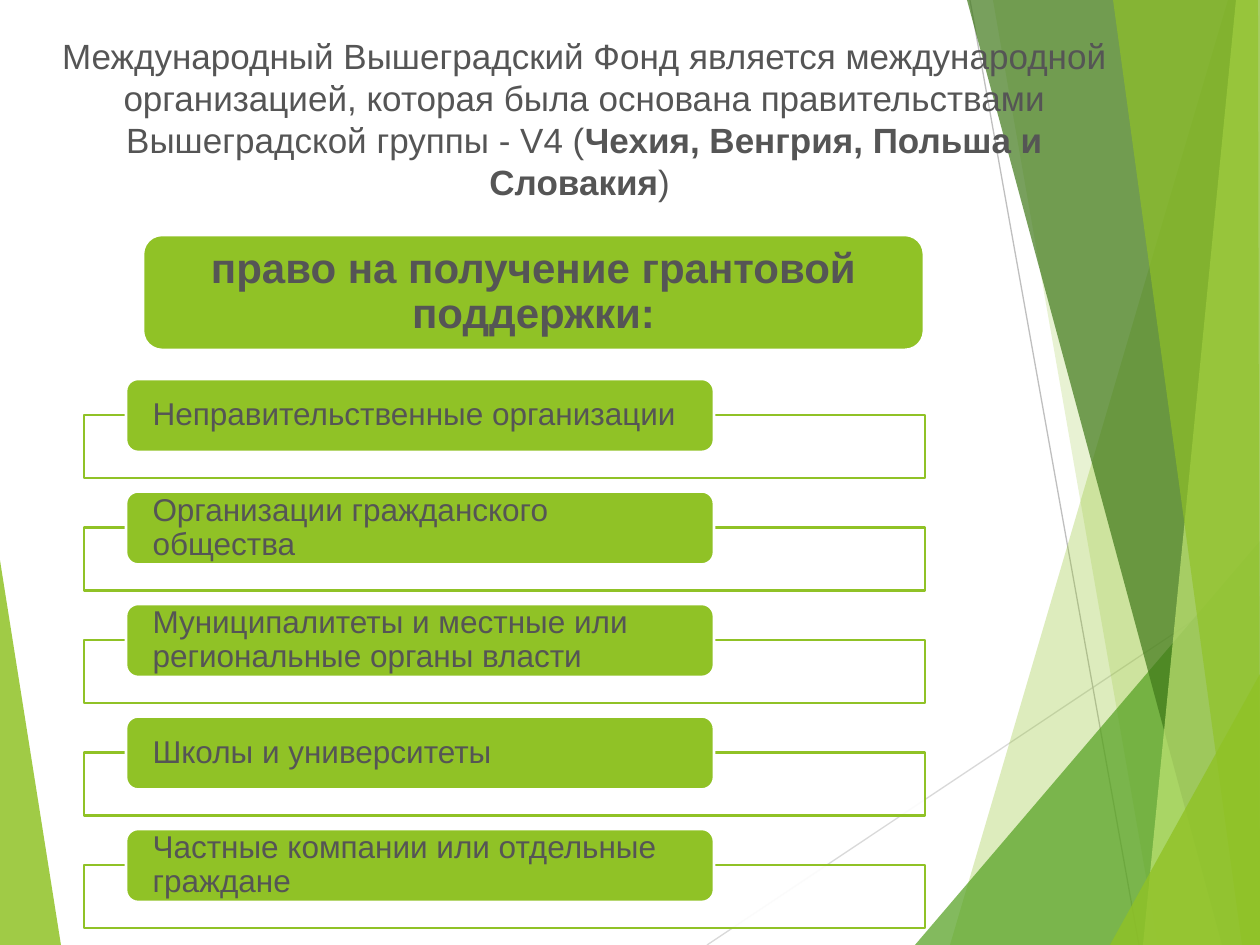
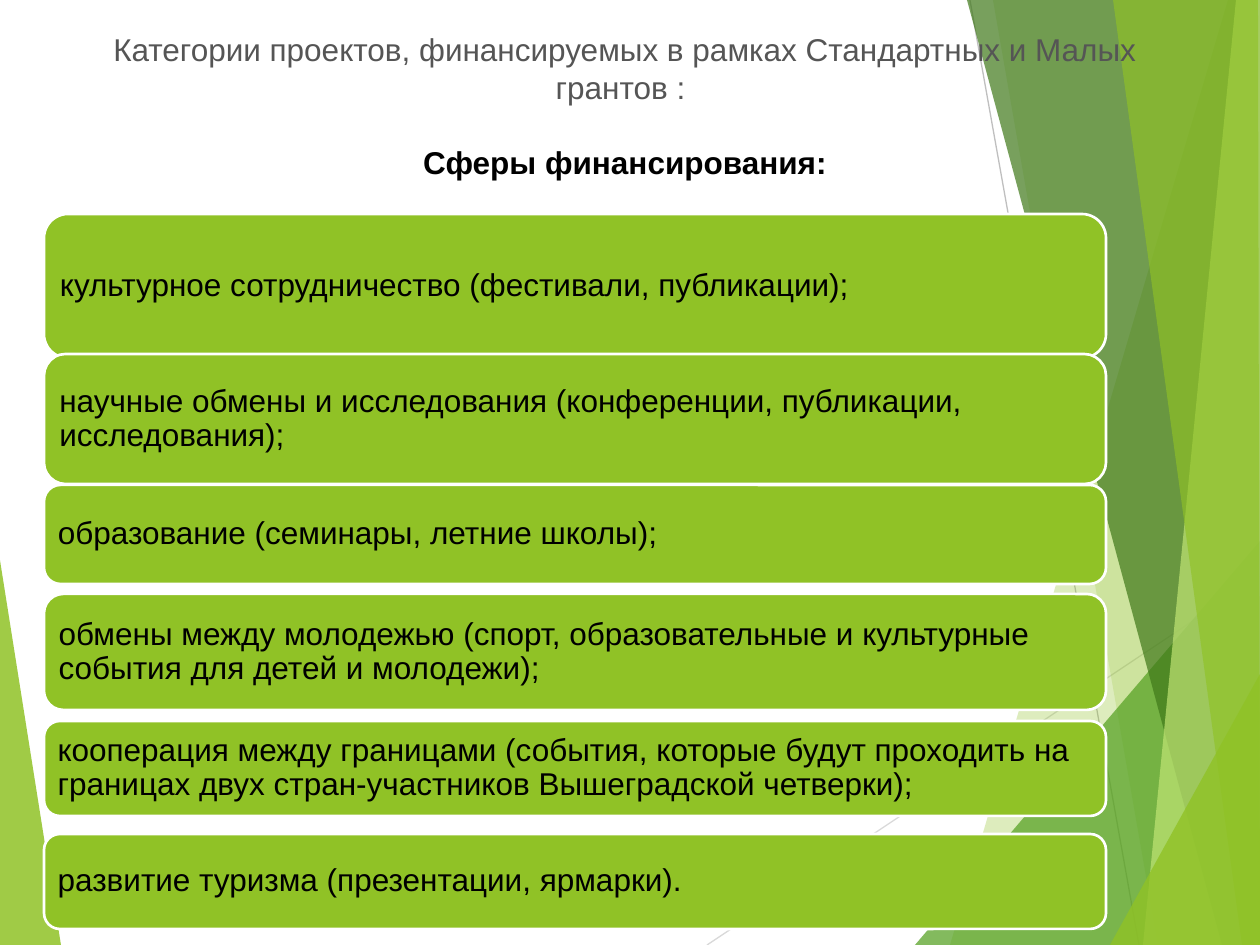
import pptx
import pptx.dml.color
import pptx.enum.shapes
import pptx.enum.text
import pptx.oxml.ns
import pptx.oxml.xmlchemy
import pptx.util
import lxml.etree
from dataclasses import dataclass


@dataclass(frozen=True)
class Theme:
    font: str = "Arial"
    lime: str = "90C226"
    green: str = "54A021"
    forest: str = "3F7819"
    pale: str = "C0E474"
    white: str = "FFFFFF"
    black: str = "000000"
    grey: str = "555555"
    light_line: str = "D9D9D9"
    dark_line: str = "BFBFBF"
    lead_size: int = 20
    body_size: int = 18
    band_size: int = 24
    outline: float = 1.5
    hairline: float = 0.75


THEME = Theme()
SCALE = 914400 / 126
WIDTH, HEIGHT = 1260, 945
ALIGN = pptx.enum.text.PP_ALIGN
ANCHOR = pptx.enum.text.MSO_ANCHOR
PRESET = pptx.enum.shapes.MSO_SHAPE

LEFT_WEDGE = (THEME.lime, 85, [(0, 560), (61, HEIGHT), (0, HEIGHT)])
GUIDE_LINES = [
    (THEME.light_line, (707, HEIGHT), (WIDTH, 576)),
    (THEME.dark_line, (970, 0), (1139, HEIGHT)),
]
RIGHT_FACETS = [
    (THEME.lime, 30, [(1228, 0), (950, HEIGHT), (WIDTH, HEIGHT), (WIDTH, 0)]),
    (THEME.lime, 20, [(993, 0), (1158, HEIGHT), (WIDTH, HEIGHT), (WIDTH, 0)]),
    (THEME.green, 72, [(915, HEIGHT), (WIDTH, 541), (WIDTH, HEIGHT)]),
    (THEME.forest, 70, [(967, 0), (1222, HEIGHT), (WIDTH, HEIGHT), (WIDTH, 0)]),
    (THEME.pale, 70, [(1236, 0), (1143, HEIGHT), (WIDTH, HEIGHT), (WIDTH, 0)]),
    (THEME.lime, 65, [(1113, 0), (1242, HEIGHT), (WIDTH, HEIGHT), (1258, 0)]),
    (THEME.lime, 80, [(1110, HEIGHT), (WIDTH, 674), (WIDTH, HEIGHT)]),
]

FUND_TITLE = [
    [
        ("Международный Вышеградский Фонд является международной организацией, "
         "которая была основана правительствами Вышеградской группы - V4 (",
         False, THEME.grey),
        ("Чехия, Венгрия, Польша и Словакия", True, THEME.grey),
        (") ", False, THEME.grey),
    ],
]
GRANT_BAND = "право на получение грантовой поддержки:"
APPLICANTS = [
    "Неправительственные организации",
    "Организации гражданского общества",
    "Муниципалитеты и местные или региональные органы власти",
    "Школы и университеты",
    "Частные компании или отдельные граждане",
]
FIRST_LABEL_TOP, LAST_LABEL_TOP = 379, 829

CATEGORIES_TITLE = [
    [("Категории проектов, финансируемых в рамках Стандартных и Малых грантов : ",
      False, THEME.grey)],
    [("Сферы финансирования:", True, THEME.black)],
]
FUNDING_AREAS = [
    (214, 144, "культурное сотрудничество (фестивали, публикации);"),
    (354, 130, "научные обмены и исследования (конференции, публикации, исследования);"),
    (485, 99, "образование (семинары, летние школы);"),
    (594, 116, "обмены между молодежью (спорт, образовательные и культурные "
               "события для детей и молодежи);"),
    (721, 95, "кооперация между границами (события, которые будут проходить на "
              "границах двух стран-участников Вышеградской четверки);"),
    (834, 95, "развитие туризма (презентации, ярмарки)."),
]


def px(value):
    return pptx.util.Emu(round(value * SCALE))


def rgb(value):
    return pptx.dml.color.RGBColor.from_string(value)


def apply_format(target, values):
    for name, value in values.items():
        setattr(target, name, value)


def format_font(font, size, color, bold=False):
    apply_format(font, {"name": THEME.font, "size": pptx.util.Pt(size), "bold": bold})
    font.color.rgb = rgb(color)


def paint(shape, color, opacity=100):
    shape.shadow.inherit = False
    shape.fill.solid()
    shape.fill.fore_color.rgb = rgb(color)
    if opacity < 100:
        color_element = shape.element.spPr.find(
            pptx.oxml.ns.qn("a:solidFill") + "/" + pptx.oxml.ns.qn("a:srgbClr"))
        alpha = lxml.etree.SubElement(color_element, pptx.oxml.ns.qn("a:alpha"))
        alpha.set("val", str(opacity * 1000))


def add_facet(slide, color, opacity, points):
    builder = slide.shapes.build_freeform(*points[0], scale=SCALE)
    builder.add_line_segments(points[1:], close=True)
    shape = builder.convert_to_shape()
    paint(shape, color, opacity)
    shape.line.fill.background()
    return shape


def add_guide(slide, color, start, end):
    connector = slide.shapes.add_connector(
        pptx.enum.shapes.MSO_CONNECTOR.STRAIGHT, *map(px, start + end))
    connector.line.color.rgb = rgb(color)
    connector.line.width = pptx.util.Pt(THEME.hairline)
    lxml.etree.SubElement(connector.element.spPr, pptx.oxml.ns.qn("a:effectLst"))
    return connector


def move_backdrop_to_layout(slide, layout):
    for placeholder in list(layout.placeholders):
        if placeholder.placeholder_format.idx != 0:
            layout.shapes.element.remove(placeholder.element)
    backdrop = [add_facet(slide, *LEFT_WEDGE)]
    backdrop += [add_guide(slide, *guide) for guide in GUIDE_LINES]
    backdrop += [add_facet(slide, *facet) for facet in RIGHT_FACETS]
    for shape in backdrop:
        layout.shapes.element.append(shape.element)


def set_title(slide, box, paragraphs, size):
    title = slide.shapes.title
    apply_format(title, dict(zip(("left", "top", "width", "height"), map(px, box))))
    frame = title.text_frame
    apply_format(frame, {"word_wrap": True, "vertical_anchor": ANCHOR.TOP,
                         "auto_size": pptx.enum.text.MSO_AUTO_SIZE.NONE})
    for index, runs in enumerate(paragraphs):
        paragraph = frame.add_paragraph() if index else frame.paragraphs[0]
        apply_format(paragraph, {"alignment": ALIGN.CENTER,
                                 "space_before": pptx.util.Pt(21 * index)})
        for text, bold, color in runs:
            run = paragraph.add_run()
            run.text = text
            format_font(run.font, size, color, bold)


def add_box(slide, preset, box, fill, line, opacity=100):
    shape = slide.shapes.add_shape(preset, *map(px, box))
    paint(shape, fill, opacity)
    shape.line.color.rgb = rgb(line)
    shape.line.width = pptx.util.Pt(THEME.outline)
    return shape


def add_card(slide, box, text, color, side, edge=0, size=THEME.body_size,
             bold=False, alignment=ALIGN.LEFT):
    shape = add_box(slide, PRESET.ROUNDED_RECTANGLE, box, THEME.lime, THEME.white)
    frame = shape.text_frame
    apply_format(frame, {
        "word_wrap": True, "vertical_anchor": ANCHOR.MIDDLE,
        "margin_left": px(side), "margin_right": px(side),
        "margin_top": px(edge), "margin_bottom": px(edge),
    })
    paragraph = frame.paragraphs[0]
    apply_format(paragraph, {"text": text, "alignment": alignment, "line_spacing": 0.9})
    format_font(paragraph.runs[0].font, size, color, bold)


def build_fund_slide(slide):
    set_title(slide, (25, 28, 1119, 200), FUND_TITLE, THEME.lead_size)
    pitch = (LAST_LABEL_TOP - FIRST_LABEL_TOP) / (len(APPLICANTS) - 1)
    for index, applicant in enumerate(APPLICANTS):
        top = FIRST_LABEL_TOP + index * pitch
        add_box(slide, PRESET.RECTANGLE, (84, top + 36, 841, 63),
                THEME.white, THEME.lime, 90)
        add_card(slide, (126, top, 588, 73), applicant, THEME.grey, 23)
    add_card(slide, (143, 235, 781, 115), GRANT_BAND, THEME.grey, 23,
             size=THEME.band_size, bold=True, alignment=ALIGN.CENTER)


def build_categories_slide(slide):
    set_title(slide, (94, 24, 1062, 185), CATEGORIES_TITLE, THEME.body_size)
    for top, height, area in FUNDING_AREAS:
        add_card(slide, (44, top, 1062, height), area, THEME.black, 9, 9)


def main():
    presentation = pptx.Presentation()
    apply_format(presentation, {"slide_width": px(WIDTH), "slide_height": px(HEIGHT)})
    layout = presentation.slide_layouts.get_by_name("Title Only")
    fund_slide = presentation.slides.add_slide(layout)
    move_backdrop_to_layout(fund_slide, layout)
    build_fund_slide(fund_slide)
    build_categories_slide(presentation.slides.add_slide(layout))
    presentation.save("out.pptx")


if __name__ == "__main__":
    main()
